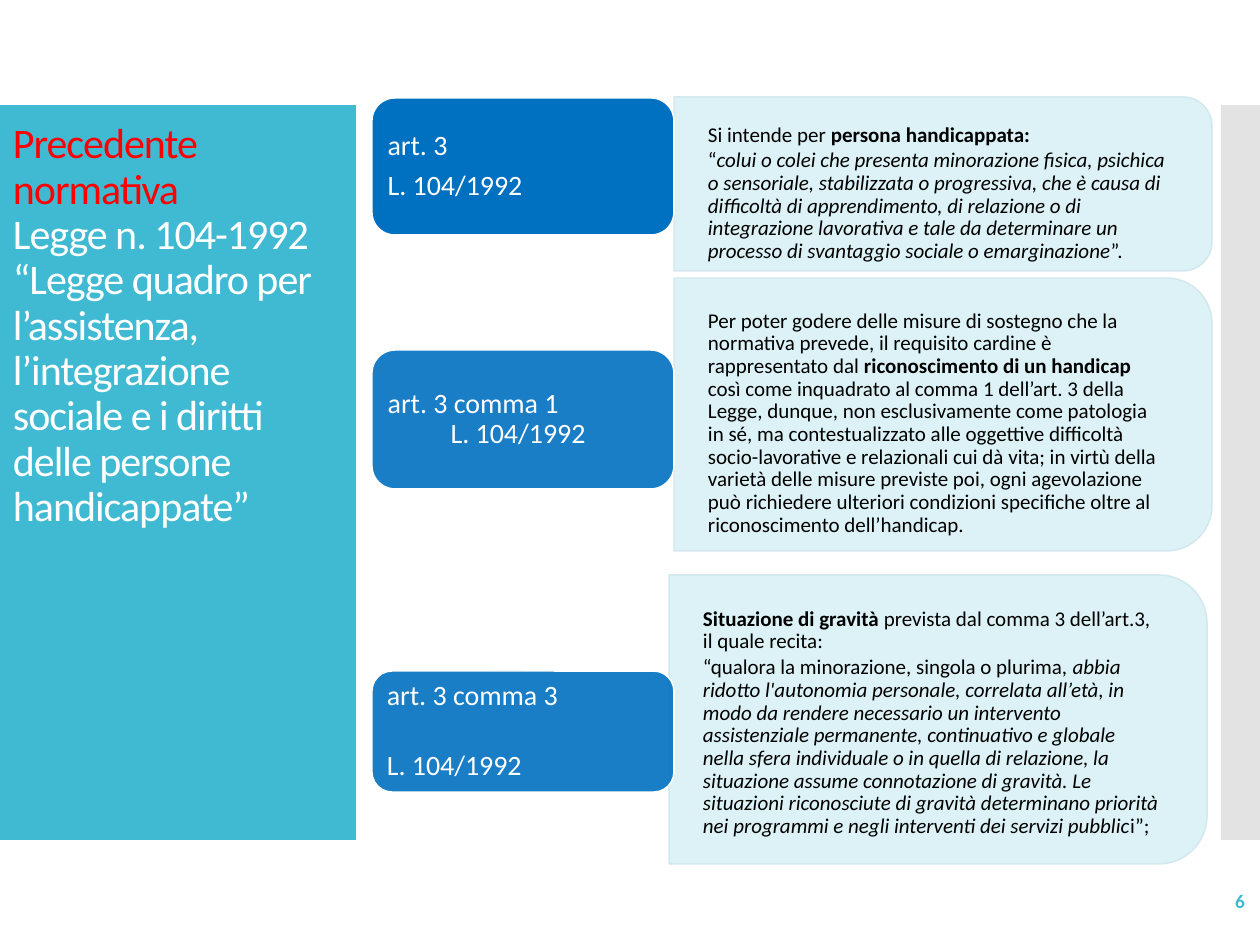
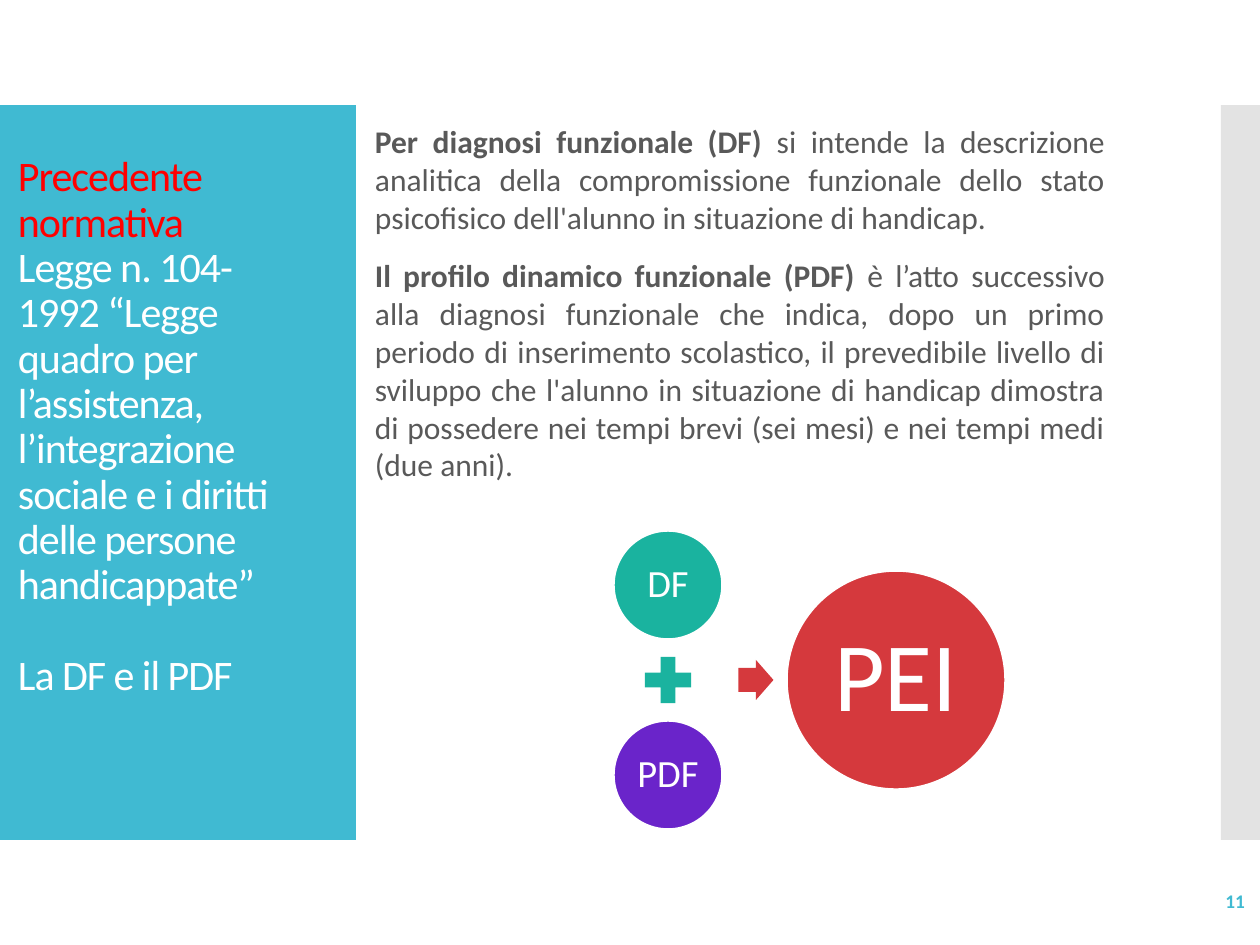
"""Builds two slides on Italian Law 104/1992, sharing bands, title style and page number."""
from dataclasses import dataclass

from lxml import etree
from pptx import Presentation
from pptx.dml.color import RGBColor
from pptx.enum.shapes import MSO_SHAPE
from pptx.enum.text import MSO_ANCHOR, PP_ALIGN
from pptx.oxml.ns import qn
from pptx.util import Emu, Pt

RECT, CARD, PANEL = MSO_SHAPE.RECTANGLE, MSO_SHAPE.ROUNDED_RECTANGLE, MSO_SHAPE.ROUND_2_SAME_RECTANGLE
OVAL, PLUS, ARROW = MSO_SHAPE.OVAL, MSO_SHAPE.MATH_PLUS, MSO_SHAPE.RIGHT_ARROW
TOP, MIDDLE = MSO_ANCHOR.TOP, MSO_ANCHOR.MIDDLE
LEFT, CENTER, RIGHT, JUSTIFY = PP_ALIGN.LEFT, PP_ALIGN.CENTER, PP_ALIGN.RIGHT, PP_ALIGN.JUSTIFY


@dataclass(frozen=True)
class Theme:
    """Colours, type sizes and line width of the deck."""
    font: str = "Calibri"
    band: str = "40BAD2"
    side_band: str = "C8C8C8"
    white: str = "FFFFFF"
    black: str = "000000"
    red: str = "FF0000"
    body: str = "595959"
    card: str = "0070C0"
    panel: str = "D9F1F6"
    panel_line: str = "CFE7EE"
    green: str = "1AB39F"
    purple: str = "6A24CA"
    crimson: str = "D5393D"
    title_size: int = 24
    body_size: int = 18
    card_size: int = 16
    panel_size: int = 12
    number_size: int = 11
    part_size: int = 22
    result_size: int = 56
    line_width: float = 0.85
    tight: float = 0.9


THEME = Theme()
WIDTH, HEIGHT, PX_PER_INCH = 1260, 945, 126
BAND_TOP, BAND_HEIGHT = 105, 735
CARD_LEFT, CARD_WIDTH = 372, 302
PANEL_WIDTH = 538
TITLE_INSETS = (13, 6)

LAW = "Legge n. 104-1992 “Legge quadro per l’assistenza, l’integrazione sociale e i diritti delle persone handicappate”"
TITLE = [("Precedente normativa", THEME.red, 0), (LAW, THEME.white, 0)]
TITLE_DF = TITLE + [("La DF e il PDF", THEME.white, 26)]

ARTICLES = [
    {
        "card": (98, 137), "alpha": 100, "lines": ["art. 3", "L. 104/1992"], "gap": 5.6, "indent": 0,
        "panel": (674, 97, 174), "text": (106, 529),
        "paragraphs": [
            [("Si intende per ", ""), ("persona handicappata:", "b")],
            [("“", ""),
             ("colui o colei che presenta minorazione fisica, psichica o sensoriale, stabilizzata o "
              "progressiva, che è causa di difficoltà di apprendimento, di relazione o di integrazione "
              "lavorativa e tale da determinare un processo di svantaggio sociale o emarginazione", "i"),
             ("”.", "")],
        ],
    },
    {
        "card": (350, 139), "alpha": 90, "lines": ["art. 3 comma 1", "L. 104/1992"], "gap": 0, "indent": 63,
        "panel": (674, 278, 273), "text": (292, 524),
        "paragraphs": [
            [("Per poter godere delle misure di sostegno che la normativa prevede, il requisito cardine "
              "è rappresentato dal ", ""),
             ("riconoscimento di un handicap ", "b"),
             ("così come inquadrato al comma 1 dell’art. 3 della Legge, dunque, non esclusivamente come "
              "patologia in sé, ma contestualizzato alle oggettive difficoltà socio-lavorative e "
              "relazionali cui dà vita; in virtù della varietà delle misure previste poi, ogni "
              "agevolazione può richiedere ulteriori condizioni specifiche oltre al riconoscimento "
              "dell’handicap.", "")],
        ],
    },
    {
        "card": (671, 121), "alpha": 90, "lines": ["art. 3 comma 3", "L. 104/1992"], "gap": 22.5, "indent": 0,
        "panel": (669, 575, 289), "text": (590, 524),
        "paragraphs": [
            [("Situazione di gravità ", "b"), ("prevista dal comma 3 dell’art.3, il quale recita:", "")],
            [("“qualora la minorazione, singola o plurima, ", ""),
             ("abbia ridotto l'autonomia personale, correlata all’età, in modo da rendere necessario un "
              "intervento assistenziale permanente, continuativo e globale nella sfera individuale o in "
              "quella di relazione, la situazione assume connotazione di gravità. Le situazioni "
              "riconosciute di gravità determinano priorità nei programmi e negli interventi dei "
              "servizi pubblic", "i"),
             ("i”;", "")],
        ],
    },
]

DEFINITIONS = [
    [("Per diagnosi funzionale (DF) ", "b"),
     ("si intende la descrizione analitica della compromissione funzionale dello stato psicofisico "
      "dell'alunno in situazione di handicap.", "")],
    [("Il profilo dinamico funzionale (PDF) ", "b"),
     ("è l’atto successivo alla diagnosi funzionale che indica, dopo un primo periodo di inserimento "
      "scolastico, il prevedibile livello di sviluppo che l'alunno in situazione di handicap dimostra "
      "di possedere nei tempi brevi (sei mesi) e nei tempi medi (due anni).", "")],
]

EQUATION_MIDDLE = 680
CIRCLES = [
    ("DF", 668, EQUATION_MIDDLE - 95, 108, THEME.green, THEME.part_size, 4),
    ("PDF", 668, EQUATION_MIDDLE + 95, 108, THEME.purple, THEME.part_size, 4),
    ("PEI", 896, EQUATION_MIDDLE, 218, THEME.crimson, THEME.result_size, 10),
]
SIGNS = [(PLUS, 668, 63, 63, THEME.green), (ARROW, 756, 35, 40, THEME.crimson)]


def px(value):
    """Turn pixels into EMU."""
    return Emu(round(value * 914400 / PX_PER_INCH))


def paint(fill, color, alpha):
    """Give a fill a solid colour with an opacity in percent."""
    fill.solid()
    fill.fore_color.rgb = RGBColor.from_string(color)
    if alpha < 100:
        for tint in fill._xPr.iter(qn("a:srgbClr")):
            if tint.getparent().getparent() is fill._xPr:
                etree.SubElement(tint, qn("a:alpha")).set("val", str(alpha * 1000))


def add_shape(page, kind, area, color, alpha=100, line=None):
    """Draw a filled preset shape with an optional outline."""
    shape = page.shapes.add_shape(kind, *map(px, area))
    shape.shadow.inherit = False
    paint(shape.fill, color, alpha)
    if line:
        shape.line.width = Pt(THEME.line_width)
        paint(shape.line.fill, line, alpha if line != THEME.white else 100)
    else:
        shape.line.fill.background()
    return shape


def prepare(box, insets, anchor):
    """Set wrapping, insets and anchor, and return the text frame."""
    frame = box.text_frame
    frame.word_wrap = True
    frame.vertical_anchor = anchor
    frame.margin_left = frame.margin_right = px(insets[0])
    frame.margin_top = frame.margin_bottom = px(insets[1])
    return frame


def add_text_box(page, area, insets=TITLE_INSETS, anchor=TOP):
    """Add an empty text box and return its frame."""
    return prepare(page.shapes.add_textbox(*map(px, area)), insets, anchor)


def write(frame, spans, size, color, align=LEFT, spacing=1.0, gap=0, indent=0, tracking=0):
    """Append one paragraph of (text, style) spans; gap applies after the first."""
    first = not frame.paragraphs[0].runs
    para = frame.paragraphs[0] if first else frame.add_paragraph()
    para.alignment = align
    para.line_spacing = spacing
    para.space_before = Pt(0 if first else gap)
    properties = para._p.get_or_add_pPr()
    if indent:
        properties.set("marL", str(px(indent)))
    para.font.name = THEME.font
    para.font.size = Pt(size)
    para.font.color.rgb = RGBColor.from_string(color)
    for text, style in spans:
        span = para.add_run()
        span.text = text
        span.font.bold = "b" in style
        span.font.italic = "i" in style
        if tracking:
            span._r.get_or_add_rPr().set("spc", str(tracking))


def add_page(deck, title, title_area, number):
    """Add a slide with the shared bands, title and page number."""
    page = deck.slides.add_slide(deck.slide_layouts[6])
    add_shape(page, RECT, (0, BAND_TOP, 356, BAND_HEIGHT), THEME.band)
    add_shape(page, RECT, (1221, BAND_TOP, 39, BAND_HEIGHT), THEME.side_band, 50)
    frame = add_text_box(page, title_area, anchor=MIDDLE)
    for text, color, gap in title:
        write(frame, [(text, "")], THEME.title_size, color, spacing=THEME.tight, gap=gap, tracking=-60)
    frame = add_text_box(page, (1099, 876, 159, 50), anchor=MIDDLE)
    write(frame, [(number, "b")], THEME.number_size, THEME.band, RIGHT)
    return page


def add_article(page, article):
    """Draw one article card and its explanation panel."""
    left, top, height = article["panel"]
    turned = (left + (PANEL_WIDTH - height) / 2, top + (height - PANEL_WIDTH) / 2, height, PANEL_WIDTH)
    add_shape(page, PANEL, turned, THEME.panel, 90, THEME.panel_line).rotation = 90
    text_top, text_width = article["text"]
    frame = add_text_box(page, (left, text_top, text_width, top + height - text_top), (34, 18))
    for spans in article["paragraphs"]:
        write(frame, spans, THEME.panel_size, THEME.black, spacing=THEME.tight, gap=1.8)

    card_top, card_height = article["card"]
    card = add_shape(page, CARD, (CARD_LEFT, card_top, CARD_WIDTH, card_height),
                     THEME.card, article["alpha"], THEME.white)
    frame = prepare(card, (9, 4), MIDDLE)
    for text, indent in zip(article["lines"], (0, article["indent"])):
        write(frame, [(text, "")], THEME.card_size, THEME.white, spacing=THEME.tight,
              gap=article["gap"], indent=indent)


def add_equation(page):
    """Draw DF plus PDF leading to PEI."""
    for text, center, middle, size, color, type_size, inset in CIRCLES:
        area = (center - size / 2, middle - size / 2, size, size)
        circle = add_shape(page, OVAL, area, color, line=THEME.white)
        write(prepare(circle, (inset, inset), MIDDLE), [(text, "")], type_size, THEME.white,
              CENTER, THEME.tight)
    for kind, center, width, height, color in SIGNS:
        sign = add_shape(page, kind, (center - width / 2, EQUATION_MIDDLE - height / 2, width, height), color)
        if kind == ARROW:
            sign.adjustments[0] = 0.6


def main():
    """Build and save the deck."""
    deck = Presentation()
    deck.slide_width, deck.slide_height = px(WIDTH), px(HEIGHT)

    page = add_page(deck, TITLE, (0, 165, 340, 323), "6")
    for article in ARTICLES:
        add_article(page, article)

    page = add_page(deck, TITLE_DF, (5, 125, 305, 605), "11")
    frame = add_text_box(page, (362, 116, 756, 694))
    for spans in DEFINITIONS:
        write(frame, spans, THEME.body_size, THEME.body, JUSTIFY, gap=12)
    add_equation(page)

    deck.save("out.pptx")


if __name__ == "__main__":
    main()
